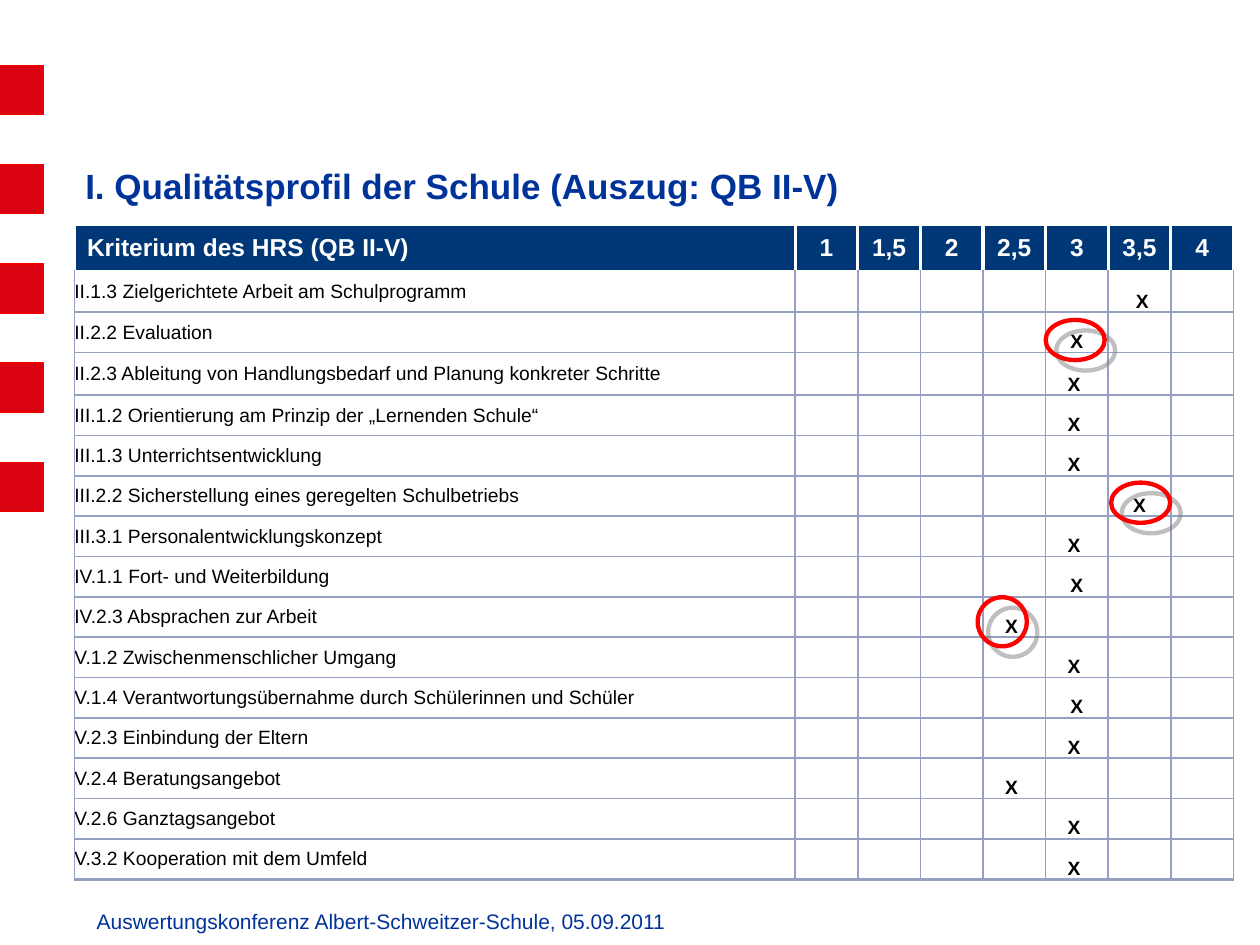
"""Build the slide with the quality profile table of a school."""
from dataclasses import dataclass
from typing import Any, NamedTuple

from lxml import etree
from pptx import Presentation
from pptx.dml.color import RGBColor
from pptx.enum.shapes import MSO_SHAPE
from pptx.enum.text import MSO_ANCHOR, PP_ALIGN
from pptx.oxml import parse_xml
from pptx.oxml.ns import nsdecls, qn
from pptx.util import Cm, Pt

RECTANGLE, OVAL = MSO_SHAPE.RECTANGLE, MSO_SHAPE.OVAL
MIDDLE, BOTTOM = MSO_ANCHOR.MIDDLE, MSO_ANCHOR.BOTTOM
LEFT, CENTER = PP_ALIGN.LEFT, PP_ALIGN.CENTER


@dataclass(frozen=True)
class Theme:
    font: str = "Arial"
    heading: str = "003399"
    header: str = "003777"
    white: str = "FFFFFF"
    black: str = "000000"
    grid: str = "96A0C2"
    square: str = "DB0312"
    square_line: str = "F00000"
    ring: str = "FF0000"
    shadow: str = "808080"
    title_size: float = 20
    header_size: float = 14
    footer_size: float = 12
    body_size: float = 11


class Place(NamedTuple):
    left: float
    top: float
    width: float
    height: float

    def lengths(self) -> list[Cm]:
        return [Cm(value) for value in self]


class Criterion(NamedTuple):
    name: str
    score: str
    shift: str = "margin_right"


class Style(NamedTuple):
    size: float
    color: str
    bold: bool = False
    align: Any = LEFT


THEME = Theme()
SCORES = ["1", "1,5", "2", "2,5", "3", "3,5", "4"]
CRITERIA = [
    Criterion("II.1.3 Zielgerichtete Arbeit am Schulprogramm", "3,5", "margin_left"),
    Criterion("II.2.2 Evaluation", "3", ""),
    Criterion("II.2.3 Ableitung von Handlungsbedarf und Planung konkreter Schritte", "3"),
    Criterion("III.1.2 Orientierung am Prinzip der „Lernenden Schule“", "3"),
    Criterion("III.1.3 Unterrichtsentwicklung", "3"),
    Criterion("III.2.2 Sicherstellung eines geregelten Schulbetriebs", "3,5", ""),
    Criterion("III.3.1 Personalentwicklungskonzept", "3"),
    Criterion("IV.1.1 Fort- und Weiterbildung", "3", ""),
    Criterion("IV.2.3 Absprachen zur Arbeit", "2,5"),
    Criterion("V.1.2 Zwischenmenschlicher Umgang", "3"),
    Criterion("V.1.4 Verantwortungsübernahme durch Schülerinnen und Schüler", "3", ""),
    Criterion("V.2.3 Einbindung der Eltern", "3"),
    Criterion("V.2.4 Beratungsangebot", "2,5"),
    Criterion("V.2.6 Ganztagsangebot", "3"),
    Criterion("V.3.2 Kooperation mit dem Umfeld", "3"),
]
TABLE = Place(1.5, 4.52, 23.37, 13.21)
NAME_WIDTH, HEADER_HEIGHT, TALL_HEIGHT, TALL_ROW = 14.53, 0.96, 0.86, 3
SQUARES, SQUARE_PITCH = 5, 2
RINGS = [
    Place(21.08, 6.45, 1.19, 0.81),
    Place(22.4, 9.73, 1.19, 0.81),
    Place(19.71, 12.04, 0.99, 0.99),
]


def apply(target: Any, values: dict[str, Any]) -> None:
    for name, value in values.items():
        setattr(target, name, value)


def write(frame: Any, text: str, style: Style) -> None:
    para = frame.paragraphs[0]
    para.alignment = style.align
    span = para.add_run()
    span.text = text
    apply(span.font, {"name": THEME.font, "size": Pt(style.size), "bold": style.bold})
    span.font.color.rgb = RGBColor.from_string(style.color)


def add_text(page: Any, place: Place, text: str, style: Style, anchor: Any) -> None:
    box = page.shapes.add_textbox(*place.lengths())
    apply(box.text_frame, {"word_wrap": True, "vertical_anchor": anchor})
    write(box.text_frame, text, style)


def add_square(page: Any, place: Place) -> None:
    square = page.shapes.add_shape(RECTANGLE, *place.lengths())
    square.shadow.inherit = False
    square.fill.solid()
    square.fill.fore_color.rgb = RGBColor.from_string(THEME.square)
    square.line.color.rgb = RGBColor.from_string(THEME.square_line)
    square.line.width = Pt(0.75)


def add_ring(page: Any, place: Place) -> None:
    ring = page.shapes.add_shape(OVAL, *place.lengths())
    ring.shadow.inherit = False
    ring.fill.background()
    ring.line.color.rgb = RGBColor.from_string(THEME.ring)
    ring.line.width = Pt(2.5)
    effects = ring.element.spPr.find(qn("a:effectLst"))
    effects.append(parse_xml(
        f'<a:outerShdw {nsdecls("a")} blurRad="0" dist="{Pt(8.5)}" dir="2700000" '
        f'algn="ctr" rotWithShape="0"><a:srgbClr val="{THEME.shadow}">'
        '<a:alpha val="50000"/></a:srgbClr></a:outerShdw>'))


def set_borders(cell: Any, borders: dict[str, tuple[str, float]]) -> None:
    properties = cell._tc.get_or_add_tcPr()
    for side, (color, width) in borders.items():
        line = etree.SubElement(properties, qn(f"a:ln{side}"), w=str(Pt(width)))
        fill = etree.SubElement(line, qn("a:solidFill"))
        etree.SubElement(fill, qn("a:srgbClr"), val=color)


def fill_header(table: Any) -> None:
    for column, text in enumerate(["Kriterium des HRS (QB II-V)", *SCORES]):
        cell = table.cell(0, column)
        set_borders(cell, dict.fromkeys("LRTB", (THEME.white, 2)))
        cell.fill.solid()
        cell.fill.fore_color.rgb = RGBColor.from_string(THEME.header)
        cell.vertical_anchor = MIDDLE
        align = CENTER if column else LEFT
        write(cell.text_frame, text, Style(THEME.header_size, THEME.white, True, align))


def fill_row(table: Any, row: int, criterion: Criterion) -> None:
    top = (THEME.white, 2) if row == 1 else (THEME.grid, 1)
    bottom = (THEME.grid, 2 if row == len(CRITERIA) else 1)
    side = (THEME.grid, 1)
    for cell in table.rows[row].cells:
        set_borders(cell, {"L": side, "R": side, "T": top, "B": bottom})
        cell.fill.background()
        apply(cell, {f"margin_{edge}": 0 for edge in ("left", "right", "top", "bottom")})
    name, mark = table.cell(row, 0), table.cell(row, SCORES.index(criterion.score) + 1)
    name.vertical_anchor, mark.vertical_anchor = MIDDLE, BOTTOM
    if criterion.shift:
        setattr(mark, criterion.shift, Cm(0.11))
    write(name.text_frame, criterion.name, Style(THEME.body_size, THEME.black))
    write(mark.text_frame, "X", Style(THEME.body_size, THEME.black, True, CENTER))


def add_profile(page: Any) -> None:
    table = page.shapes.add_table(len(CRITERIA) + 1, len(SCORES) + 1, *TABLE.lengths()).table
    apply(table, {"first_row": False, "horz_banding": False})
    score_width = (TABLE.width - NAME_WIDTH) / len(SCORES)
    for index, column in enumerate(table.columns):
        column.width = Cm(score_width if index else NAME_WIDTH)
    row_height = (TABLE.height - HEADER_HEIGHT - TALL_HEIGHT) / (len(CRITERIA) - 1)
    special = {0: HEADER_HEIGHT, TALL_ROW: TALL_HEIGHT}
    for index, row in enumerate(table.rows):
        row.height = Cm(special.get(index, row_height))
    fill_header(table)
    for index, criterion in enumerate(CRITERIA, start=1):
        fill_row(table, index, criterion)


def main() -> None:
    deck = Presentation()
    apply(deck, {"slide_width": Cm(25.4), "slide_height": Cm(19.05)})
    page = deck.slides.add_slide(deck.slide_layouts[6])
    for index in range(SQUARES):
        add_square(page, Place(-0.03, 1.32 + index * SQUARE_PITCH, 0.91, 0.99))
    add_text(page, Place(1.7, 18.19, 19.81, 0.91),
             "Auswertungskonferenz Albert-Schweitzer-Schule, 05.09.2011",
             Style(THEME.footer_size, THEME.heading), MSO_ANCHOR.TOP)
    add_profile(page)
    add_text(page, Place(1.47, 3.13, 23.42, 1.22),
             "I. Qualitätsprofil der Schule (Auszug: QB II-V)",
             Style(THEME.title_size, THEME.heading, True), MIDDLE)
    for place in RINGS:
        add_ring(page, place)
    deck.save("out.pptx")


if __name__ == "__main__":
    main()
